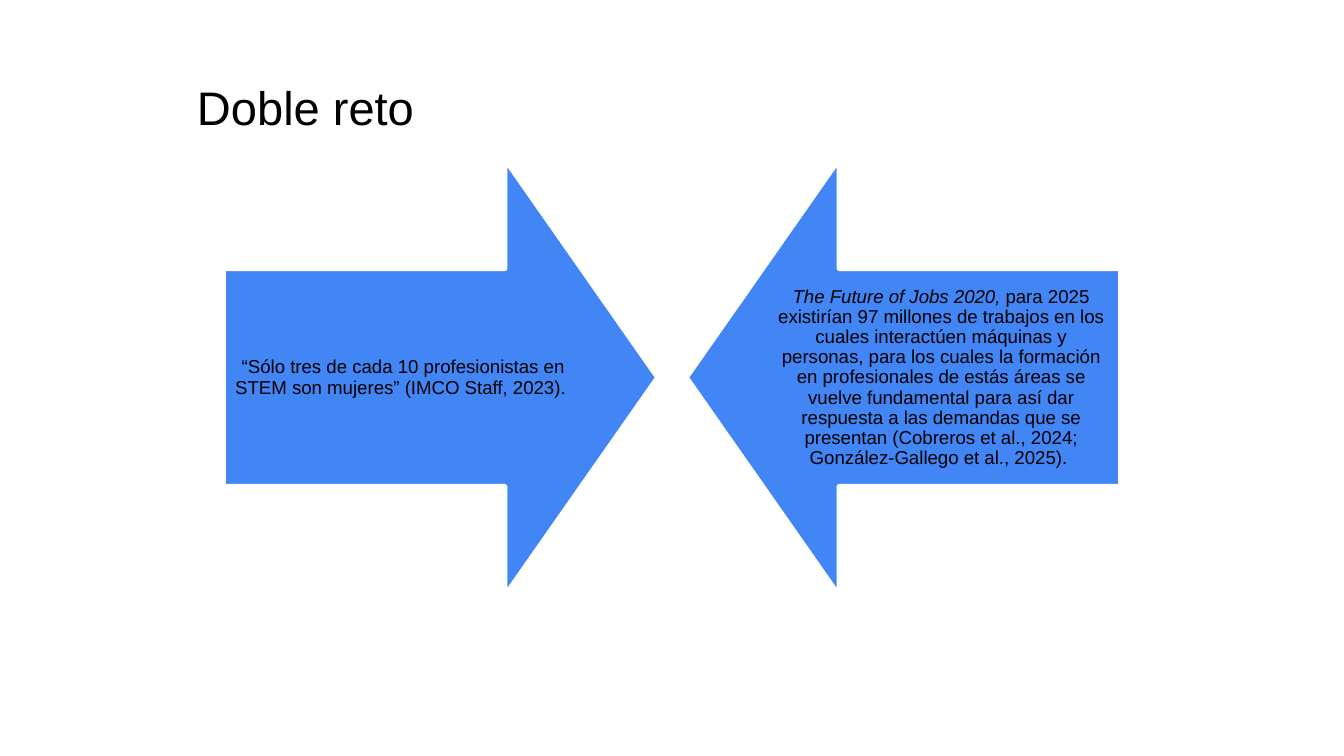
from pptx import Presentation
from pptx import util as u
from pptx.dml.color import RGBColor
from pptx.enum import shapes, text

SCALE = 914400 / 134.4
COLORS = {"arrow": "4285F4", "edge": "FFFFFF", "ink": "000000"}
FONT = "Arial"


def px(length):
    return u.Emu(round(length * SCALE))


def color(name):
    return RGBColor.from_string(COLORS[name])


class Board:
    def __init__(self, page):
        self.page = page

    def arrow(self, left, top, side, rotation):
        arrow = self.page.shapes.add_shape(
            shapes.MSO_SHAPE.DOWN_ARROW, px(left), px(top), px(side), px(side))
        arrow.rotation = rotation
        arrow.adjustments[0] = 0.5
        arrow.adjustments[1] = 0.35
        arrow.shadow.inherit = False
        arrow.fill.solid()
        arrow.fill.fore_color.rgb = color("arrow")
        arrow.line.color.rgb = color("edge")
        arrow.line.width = u.Pt(2)

    def text(self, left, top, width, height, runs, size, inset,
             align=text.PP_ALIGN.LEFT, anchor=text.MSO_ANCHOR.TOP, spacing=1.0):
        box = self.page.shapes.add_textbox(px(left), px(top), px(width), px(height))
        frame = box.text_frame
        frame.word_wrap = True
        frame.vertical_anchor = anchor
        frame.margin_left = frame.margin_right = px(inset)
        frame.margin_top = frame.margin_bottom = px(inset)
        para = frame.paragraphs[0]
        para.alignment = align
        para.line_spacing = spacing
        for content, italic in runs:
            span = para.add_run()
            span.text = content
            span.font.name = FONT
            span.font.size = u.Pt(size)
            span.font.italic = italic
            span.font.color.rgb = color("ink")

    def challenge(self, arrow_left, text_left, rotation, runs):
        self.arrow(arrow_left, 161, 433, rotation)
        self.text(text_left, 270, 358, 216, runs, 10, 11,
                  text.PP_ALIGN.CENTER, text.MSO_ANCHOR.MIDDLE, 0.9)


def main():
    deck = Presentation()
    deck.slide_width, deck.slide_height = px(1344), px(756)
    board = Board(deck.slides.add_slide(deck.slide_layouts[6]))

    board.text(184, 66, 1114, 85, [("Doble reto", False)], 25.2, 13)
    board.challenge(224, 224, 270, [
        ("“Sólo tres de cada 10 profesionistas en STEM son mujeres” "
         "(IMCO Staff, 2023). ", False),
    ])
    board.challenge(687, 762, 90, [
        ("The Future of Jobs 2020, ", True),
        ("para 2025 existirían 97 millones de trabajos en los cuales "
         "interactúen máquinas y personas, para los cuales la formación en "
         "profesionales de estás áreas se vuelve fundamental para así dar "
         "respuesta a las demandas que se presentan (Cobreros et al., 2024; "
         "González-Gallego et al., 2025). ", False),
    ])
    deck.save("out.pptx")


if __name__ == "__main__":
    main()
